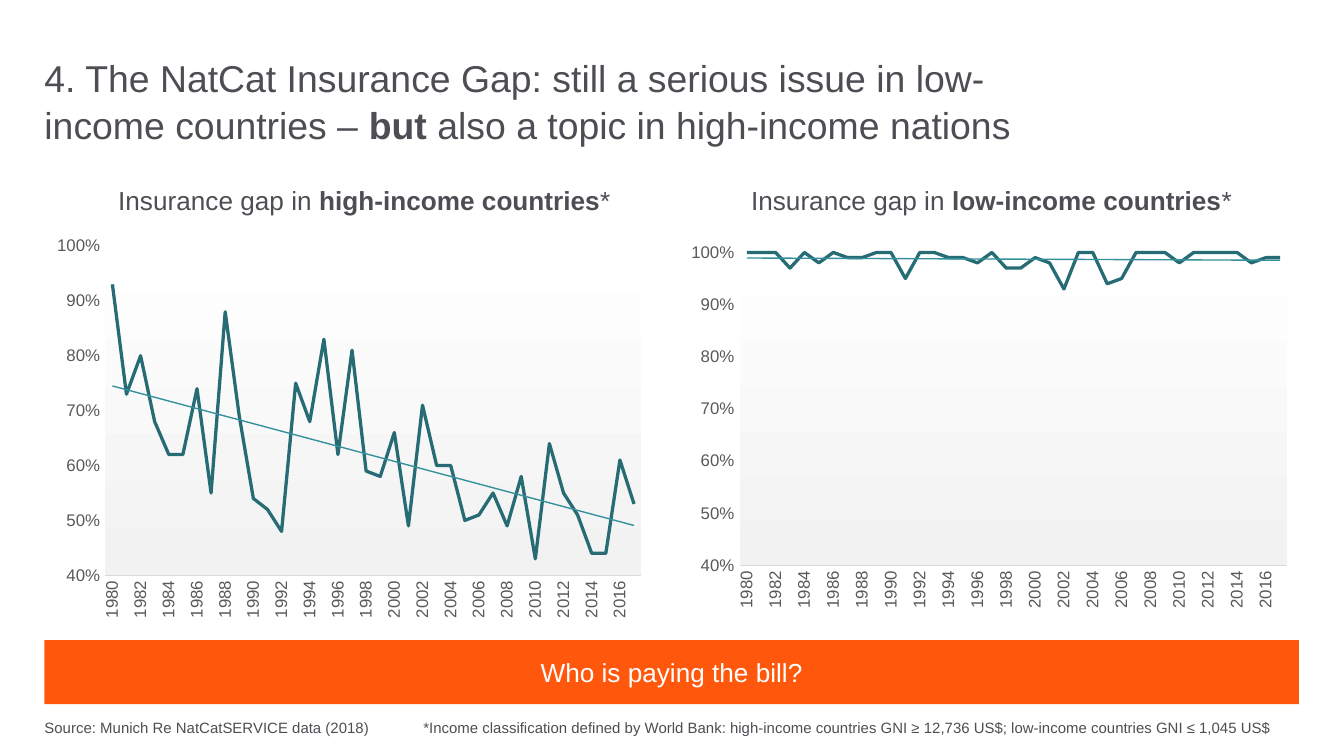
from lxml import etree
from pptx import Presentation
from pptx.chart.data import CategoryChartData
from pptx.dml.color import RGBColor
from pptx.enum.chart import XL_CHART_TYPE, XL_MARKER_STYLE, XL_TICK_MARK
from pptx.enum.shapes import MSO_SHAPE
from pptx.enum.text import MSO_ANCHOR, MSO_AUTO_SIZE, PP_ALIGN
from pptx.oxml import parse_xml
from pptx.oxml.ns import nsdecls, qn
from pptx.util import Pt

LINE_CHART = XL_CHART_TYPE.LINE
NO_MARKER = XL_MARKER_STYLE.NONE
NO_TICK = XL_TICK_MARK.NONE
RECTANGLE = MSO_SHAPE.RECTANGLE
TOP, MIDDLE = MSO_ANCHOR.TOP, MSO_ANCHOR.MIDDLE
LEFT, CENTER = PP_ALIGN.LEFT, PP_ALIGN.CENTER
NO_FIT = MSO_AUTO_SIZE.NONE

THEME = {
    "font": "Arial",
    "text": "4D4E53", "axis_text": "595959", "axis_line": "D9D9D9",
    "series": "276C75", "trend": "34909C",
    "plot_top": "FFFFFF", "plot_bottom": "F2F2F2",
    "banner": "FF580C", "banner_text": "FFFFFF",
    "title_size": 20, "heading_size": 14, "axis_size": 9, "note_size": 8,
    "series_width": 1.75, "thin_width": 0.75,
}

# Each run is (text, bold)
TITLE = [
    ("4. The NatCat Insurance Gap: still a serious issue in low-income countries – ", False),
    ("but ", True),
    ("also a topic in high-income nations", False),
]
BANNER = [("Who is paying the bill?", False)]
NOTES = [
    ("Source: Munich Re NatCatSERVICE data (2018)", False),
    ("\t*Income classification defined by World Bank: high-income countries "
     "GNI ≥ 12,736 US$; low-income countries GNI ≤ 1,045 US$", False),
]
YEARS = [str(year) for year in range(1980, 2018)]

# Boxes are (left, top, width, height); plots are the same as shares of the chart
PANELS = [
    {
        "group": "high-income countries",
        "heading_box": (56.2, 95, 293.8, 24.5),
        "chart_box": (23.8, 121, 326.2, 215.3),
        "plot": (0.1, 0.05, 0.88, 0.82),
        "gap": [0.93, 0.73, 0.8, 0.68, 0.62, 0.62, 0.74, 0.55, 0.88, 0.69,
                0.54, 0.52, 0.48, 0.75, 0.68, 0.83, 0.62, 0.81, 0.59, 0.58,
                0.66, 0.49, 0.71, 0.6, 0.6, 0.5, 0.51, 0.55, 0.49, 0.58,
                0.43, 0.64, 0.55, 0.51, 0.44, 0.44, 0.61, 0.53],
    },
    {
        "group": "low-income countries",
        "heading_box": (395.3, 95, 292.3, 24.5),
        "chart_box": (370.1, 120.2, 326.2, 215.3),
        "plot": (0.08, 0.07, 0.9, 0.78),
        "gap": [1, 1, 1, 0.97, 1, 0.98, 1, 0.99, 0.99, 1,
                1, 0.95, 1, 1, 0.99, 0.99, 0.98, 1, 0.97, 0.97,
                0.99, 0.98, 0.93, 1, 1, 0.94, 0.95, 1, 1, 1,
                0.98, 1, 1, 1, 1, 0.98, 0.99, 0.99],
    },
]


def color(name):
    return RGBColor.from_string(THEME[name])


def points(box):
    return [Pt(length) for length in box]


def style_font(font, size, color_name):
    font.name = THEME["font"]
    font.size = Pt(THEME[size])
    font.color.rgb = color(color_name)


def write(frame, runs, size, color_name="text", align=LEFT, anchor=TOP, inset=None):
    """Fill a text frame with one paragraph and return that paragraph."""
    frame.word_wrap = True
    frame.auto_size = NO_FIT
    frame.vertical_anchor = anchor
    if inset is not None:
        frame.margin_left = frame.margin_top = Pt(inset)
        frame.margin_right = frame.margin_bottom = Pt(inset)
    para = frame.paragraphs[0]
    para.alignment = align
    for text, bold in runs:
        span = para.add_run()
        span.text = text
        style_font(span.font, size, color_name)
        span.font.bold = bold
    return para


def add_tab_stop(para, position):
    tabs = etree.SubElement(para._p.get_or_add_pPr(), qn("a:tabLst"))
    etree.SubElement(tabs, qn("a:tab"), pos=str(int(Pt(position))), algn="l")


def format_plot(plot_area, shares):
    """Fix the inner plot rectangle and give it a vertical gradient."""
    for old in plot_area.findall(qn("c:layout")):
        plot_area.remove(old)
    places = "".join(f'<c:{tag} val="{share}"/>' for tag, share in zip("xywh", shares))
    plot_area.insert(0, parse_xml(
        f'<c:layout {nsdecls("c")}><c:manualLayout><c:layoutTarget val="inner"/>'
        f'<c:xMode val="edge"/><c:yMode val="edge"/>{places}'
        '</c:manualLayout></c:layout>'))
    stops = "".join(
        f'<a:gs pos="{position}"><a:srgbClr val="{THEME[name]}"/></a:gs>'
        for position, name in ((0, "plot_top"), (100000, "plot_bottom")))
    plot_area.append(parse_xml(
        f'<c:spPr {nsdecls("c", "a")}><a:gradFill><a:gsLst>{stops}</a:gsLst>'
        '<a:lin ang="5400000" scaled="0"/></a:gradFill>'
        '<a:ln><a:noFill/></a:ln></c:spPr>'))


def add_trend_line(series):
    width = int(Pt(THEME["thin_width"]))
    series._element.find(qn("c:cat")).addprevious(parse_xml(
        f'<c:trendline {nsdecls("c", "a")}><c:spPr><a:ln w="{width}"><a:solidFill>'
        f'<a:srgbClr val="{THEME["trend"]}"/></a:solidFill></a:ln></c:spPr>'
        '<c:trendlineType val="linear"/><c:dispRSqr val="0"/><c:dispEq val="0"/>'
        '</c:trendline>'))


def add_gap_chart(page, panel):
    data = CategoryChartData(number_format="0%")
    data.categories = YEARS
    data.add_series("Insurance gap", panel["gap"])
    chart = page.shapes.add_chart(LINE_CHART, *points(panel["chart_box"]), data).chart
    chart.has_title = False
    chart.has_legend = False
    style_font(chart.font, "axis_size", "axis_text")

    for axis in (chart.category_axis, chart.value_axis):
        axis.has_major_gridlines = False
        axis.major_tick_mark = axis.minor_tick_mark = NO_TICK
        style_font(axis.tick_labels.font, "axis_size", "axis_text")
    years, shares = chart.category_axis, chart.value_axis
    years.format.line.color.rgb = color("axis_line")
    years.format.line.width = Pt(THEME["thin_width"])
    years._element.find(qn("c:txPr")).find(qn("a:bodyPr")).set("rot", "-5400000")
    skip = parse_xml(f'<c:tickLblSkip {nsdecls("c")} val="2"/>')
    years._element.find(qn("c:noMultiLvlLbl")).addprevious(skip)
    shares.minimum_scale, shares.maximum_scale, shares.major_unit = 0.4, 1, 0.1
    shares.format.line.fill.background()
    shares.tick_labels.number_format = "0%"
    shares.tick_labels.number_format_is_linked = False

    series = chart.plots[0].series[0]
    series.smooth = False
    series.marker.style = NO_MARKER
    series.format.line.color.rgb = color("series")
    series.format.line.width = Pt(THEME["series_width"])
    add_trend_line(series)
    format_plot(chart._chartSpace.chart.plotArea, panel["plot"])


def main():
    deck = Presentation()
    deck.slide_width, deck.slide_height = Pt(720), Pt(405)
    page = deck.slides.add_slide(deck.slide_layouts[5])

    title = page.shapes.title
    title.left, title.top, title.width, title.height = points((23.8, 28.1, 552.2, 44))
    write(title.text_frame, TITLE, "title_size", inset=0).line_spacing = 1.05

    for panel in PANELS:
        heading = page.shapes.add_textbox(*points(panel["heading_box"]))
        runs = [("Insurance gap in ", False), (panel["group"], True), ("*", False)]
        write(heading.text_frame, runs, "heading_size")
        add_gap_chart(page, panel)

    banner = page.shapes.add_shape(RECTANGLE, *points((23.8, 342.9, 672, 34.4)))
    banner.shadow.inherit = False
    banner.fill.solid()
    banner.fill.fore_color.rgb = color("banner")
    banner.line.fill.background()
    write(banner.text_frame, BANNER, "heading_size", "banner_text", CENTER, MIDDLE)

    notes = page.shapes.add_textbox(*points((23.8, 383.8, 696, 10)))
    para = write(notes.text_frame, NOTES, "note_size", inset=0)
    add_tab_stop(para, 203)
    para.line_spacing = 1.1

    deck.save("out.pptx")


if __name__ == "__main__":
    main()
